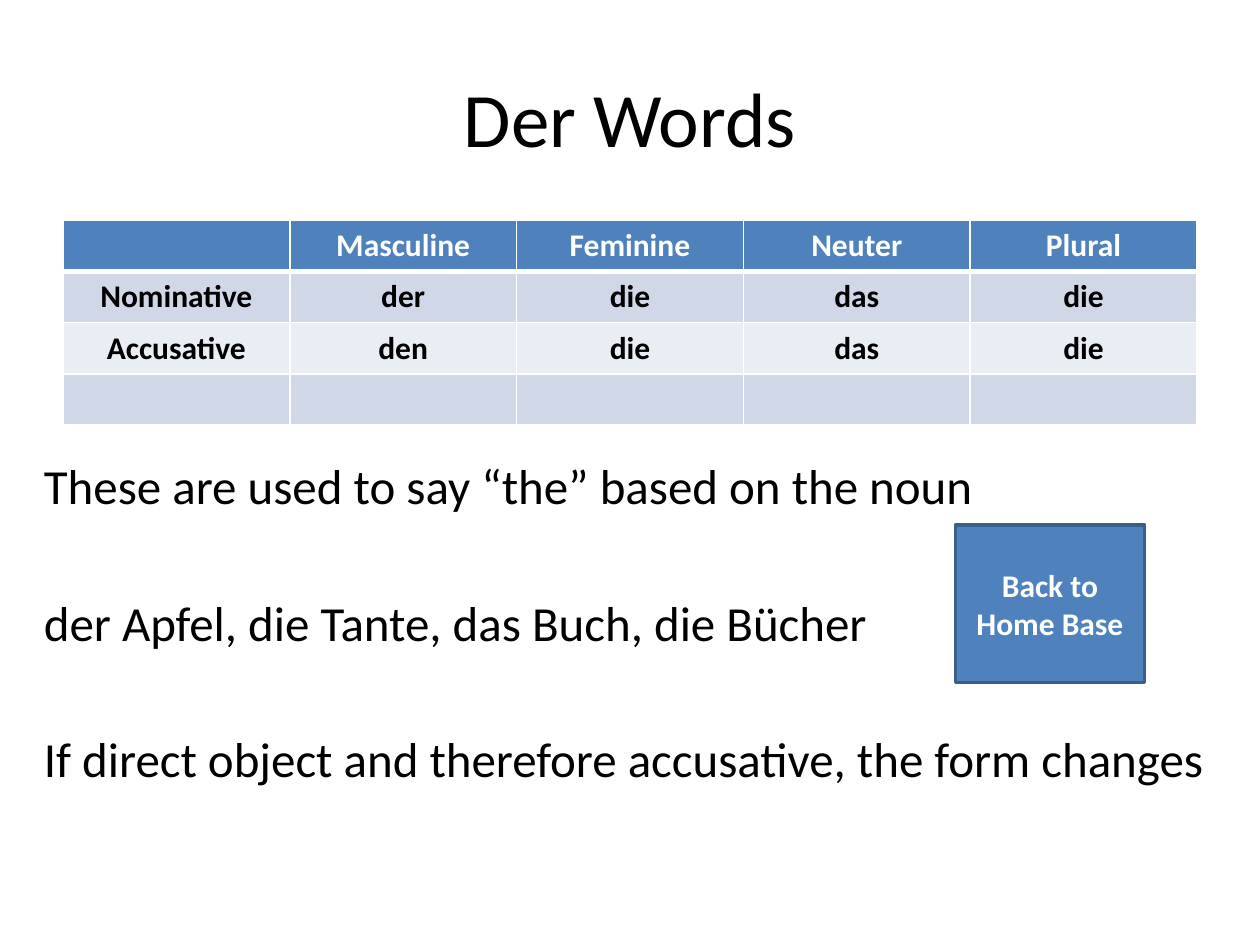
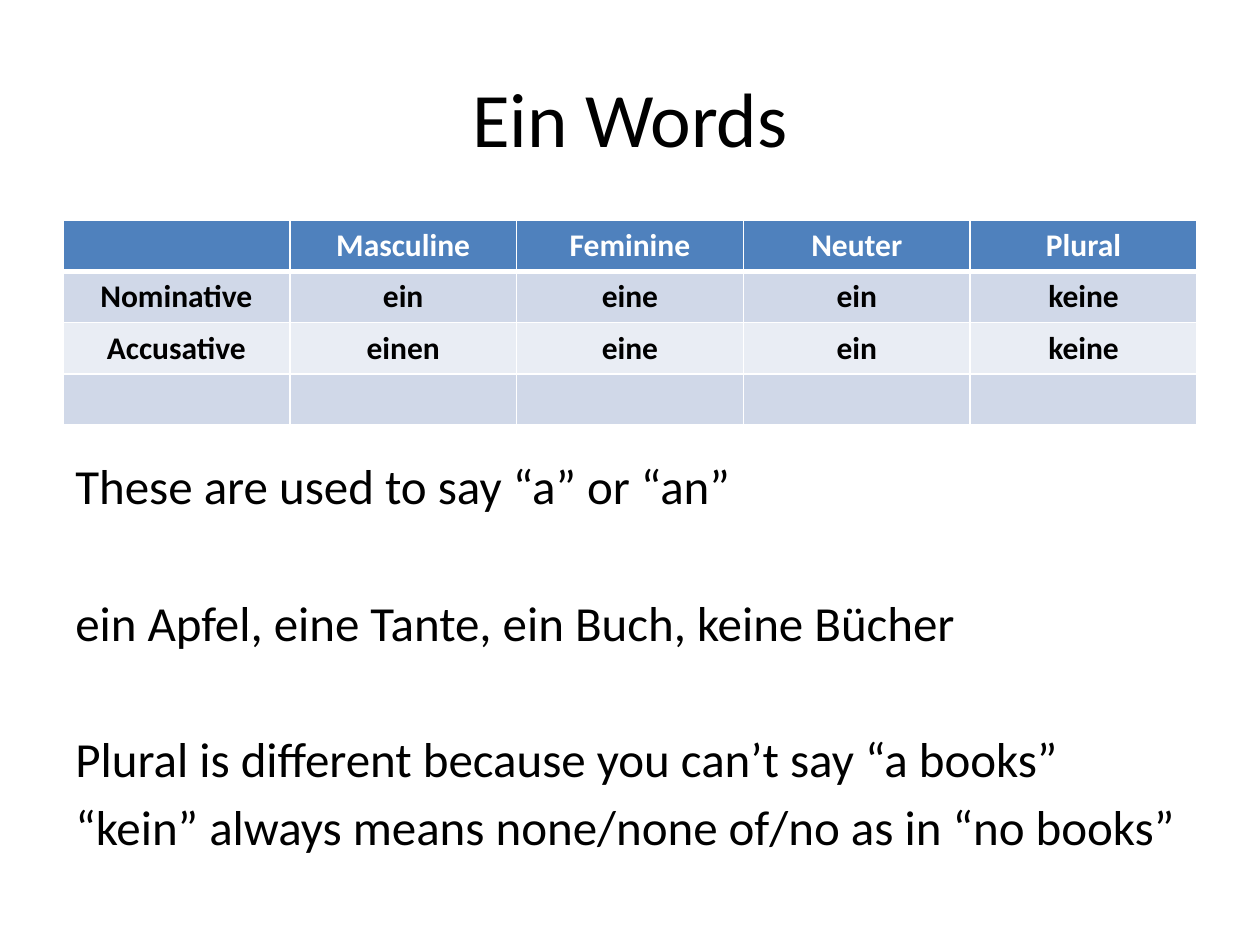
from lxml import etree
from pptx import Presentation
from pptx.dml.color import RGBColor
from pptx.enum.shapes import MSO_SHAPE
from pptx.enum.text import MSO_ANCHOR, PP_ALIGN
from pptx.oxml.ns import qn
from pptx.util import Pt

BUTTON = MSO_SHAPE.ACTION_BUTTON_CUSTOM
MIDDLE = MSO_ANCHOR.MIDDLE
LEFT, CENTER = PP_ALIGN.LEFT, PP_ALIGN.CENTER

FONT = "Calibri"
BLACK = RGBColor(0x00, 0x00, 0x00)
WHITE = RGBColor(0xFF, 0xFF, 0xFF)
BLUE = RGBColor(0x4F, 0x81, 0xBD)
DARK_BLUE = RGBColor(0x3A, 0x5F, 0x8C)
BAND_DARK = RGBColor(0xD0, 0xD8, 0xE8)
BAND_LIGHT = RGBColor(0xE9, 0xED, 0xF4)

# Boxes: left, top, width, height in points
TITLE_BOX = (36, 21.6, 648, 90)
TABLE_BOX = (36, 126, 648, 116.8)
BUTTON_BOX = (546, 300, 108, 90)

GENDERS = ["", "Masculine", "Feminine", "Neuter", "Plural"]
LINE_GAP = 5.2      # between consecutive lines
BLOCK_GAP = 44.4    # between separate remarks


def place(box):
    return [Pt(v) for v in box]


def style(p, size, color, bold=False, align=LEFT):
    p.alignment = align
    for r in p.runs:
        r.font.name = FONT
        r.font.size = Pt(size)
        r.font.bold = bold
        r.font.color.rgb = color


def add_title(s, box, text):
    tf = s.shapes.add_textbox(*place(box)).text_frame
    tf.word_wrap = True
    tf.vertical_anchor = MIDDLE
    tf.text = text
    style(tf.paragraphs[0], 44, BLACK, align=CENTER)


def set_borders(cell, widths):
    """Draw white borders; widths maps the sides L, R, T, B to points."""
    tc_pr = cell._tc.get_or_add_tcPr()
    for i, (side, width) in enumerate(widths.items()):
        ln = etree.Element(qn("a:ln" + side), w=str(Pt(width)))
        fill = etree.SubElement(ln, qn("a:solidFill"))
        etree.SubElement(fill, qn("a:srgbClr"), val=str(WHITE))
        tc_pr.insert(i, ln)


def add_forms_table(s, box, nominative, accusative):
    rows = [GENDERS, ["Nominative"] + nominative,
            ["Accusative"] + accusative, [""] * len(GENDERS)]
    fills = [BLUE, BAND_DARK, BAND_LIGHT, BAND_DARK]
    table = s.shapes.add_table(len(rows), len(GENDERS), *place(box)).table
    for col in table.columns:
        col.width = Pt(box[2] / len(GENDERS))
    for i, (texts, fill) in enumerate(zip(rows, fills)):
        table.rows[i].height = Pt(box[3] / len(rows))
        widths = {"L": 1, "R": 1, "T": 3 if i == 1 else 1, "B": 3 if i == 0 else 1}
        for j, text in enumerate(texts):
            cell = table.cell(i, j)
            cell.fill.solid()
            cell.fill.fore_color.rgb = fill
            set_borders(cell, widths)
            if text:
                cell.text_frame.text = text
                style(cell.text_frame.paragraphs[0], 18,
                      BLACK if i else WHITE, True, CENTER)


def add_remarks(s, box, blocks):
    """Each block is a list of lines; blocks stand further apart."""
    tf = s.shapes.add_textbox(*place(box)).text_frame
    tf.word_wrap = True
    tf.text = "\n".join(line for block in blocks for line in block)
    gaps = [LINE_GAP if k else BLOCK_GAP for block in blocks for k in range(len(block))]
    gaps[0] = 0
    for p, gap in zip(tf.paragraphs, gaps):
        p.space_before = Pt(gap)
        style(p, 28, BLACK)


def add_home_button(s, box, text):
    sp = s.shapes.add_shape(BUTTON, *place(box))
    sp.shadow.inherit = False
    sp.fill.solid()
    sp.fill.fore_color.rgb = BLUE
    sp.line.color.rgb = DARK_BLUE
    sp.line.width = Pt(2)
    tf = sp.text_frame
    tf.word_wrap = True
    tf.vertical_anchor = MIDDLE
    tf.text = text
    style(tf.paragraphs[0], 18, WHITE, True, CENTER)


def add_article_slide(prs, title, nominative, accusative, remarks_box, remarks):
    s = prs.slides.add_slide(prs.slide_layouts[6])
    add_title(s, TITLE_BOX, title)
    add_forms_table(s, TABLE_BOX, nominative, accusative)
    add_remarks(s, remarks_box, remarks)
    return s


def main():
    prs = Presentation()
    prs.slide_width, prs.slide_height = Pt(720), Pt(540)

    # Definite articles
    s = add_article_slide(
        prs, "Der Words",
        ["der", "die", "das", "die"], ["den", "die", "das", "die"],
        (18, 257, 696, 258.5),
        [["These are used to say “the” based on the noun"],
         ["der Apfel, die Tante, das Buch, die Bücher"],
         ["If direct object and therefore accusative, the form changes"]])
    add_home_button(s, BUTTON_BOX, "Back to Home Base")

    # Indefinite articles
    add_article_slide(
        prs, "Ein Words",
        ["ein", "eine", "ein", "keine"], ["einen", "eine", "ein", "keine"],
        (36, 257, 648, 258.5),
        [["These are used to say “a” or “an”"],
         ["ein Apfel, eine Tante, ein Buch, keine Bücher"],
         ["Plural is different because you can’t say “a books”",
          "“kein” always means none/none of/no as in “no books”"]])

    prs.save("out.pptx")


if __name__ == "__main__":
    main()
